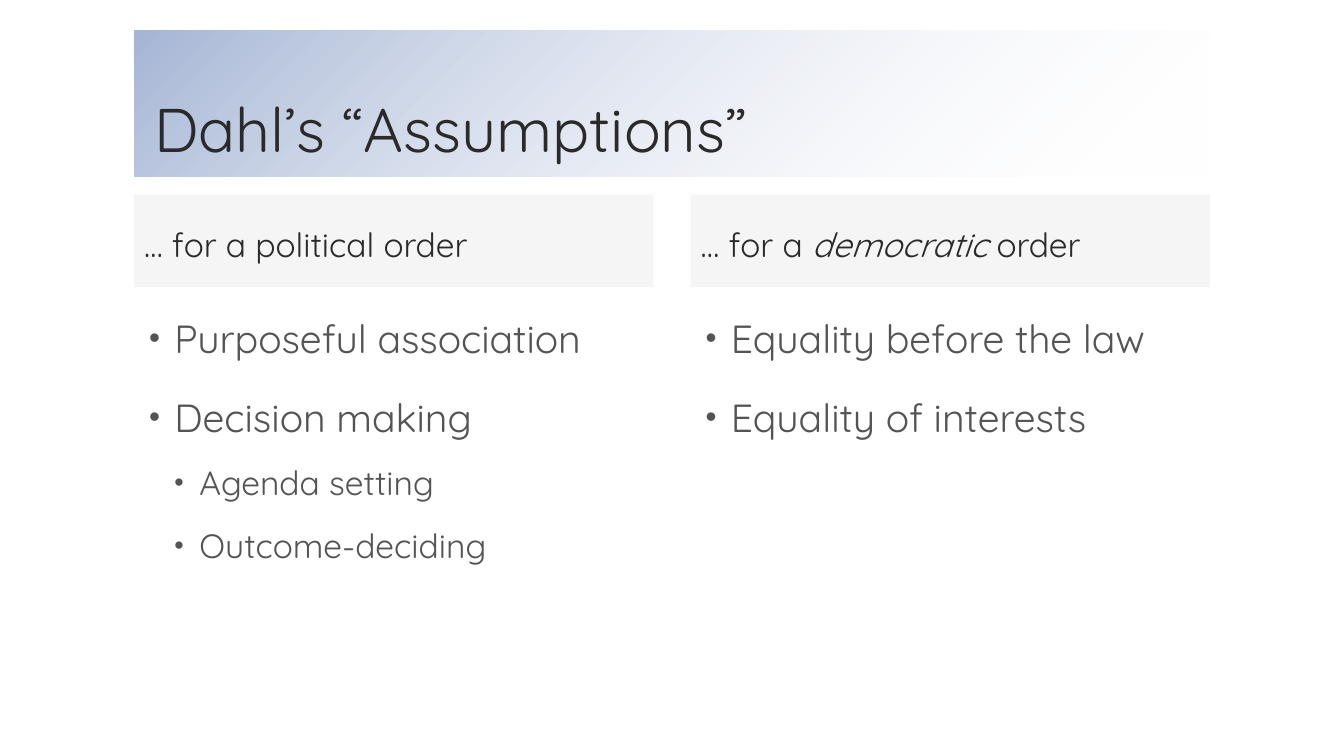
from lxml.etree import SubElement
from pptx import Presentation
from pptx.dml.color import RGBColor
from pptx.enum.shapes import MSO_SHAPE
from pptx.enum.text import MSO_ANCHOR, MSO_AUTO_SIZE, PP_ALIGN
from pptx.oxml.ns import qn
from pptx.util import Pt

PX = 9144  # 100 px to the inch
FONT = "Quicksand"
DARK = RGBColor(0x2A, 0x2A, 0x2A)
GREY = RGBColor(0x54, 0x54, 0x54)
BLUE = RGBColor(0xA6, 0xB6, 0xD6)
WHITE = RGBColor(0xFF, 0xFF, 0xFF)
SILVER = RGBColor(0xBF, 0xBF, 0xBF)

LEFT, COL_W, COL_STEP = 133, 515, 552
# level: text size, space before, left indent in px
LEVELS = {0: (28, 18, 30), 1: (24, 12, 55)}
HANG = 25

COLUMNS = [
    ([("… for a political order", False)],
     [("Purposeful association", 0), ("Decision making", 0),
      ("Agenda setting", 1), ("Outcome-deciding", 1)]),
    ([("… for a ", False), ("democratic", True), (" order", False)],
     [("Equality before the law", 0), ("Equality of interests", 0)]),
]


def add_run(p, text, size, color, italic=False):
    r = p.add_run()
    r.text = text
    for name, value in {"name": FONT, "size": Pt(size), "italic": italic}.items():
        setattr(r.font, name, value)
    r.font.color.rgb = color


def set_alpha(fill_element, percent):
    color = fill_element.find(qn("a:srgbClr"))
    SubElement(color, qn("a:alpha"), val=str(percent * 1000))


prs = Presentation()
prs.slide_width, prs.slide_height = 1333 * PX, 750 * PX
s = prs.slides.add_slide(prs.slide_layouts[5])

# Title band
title = s.shapes.title
title.left, title.top, title.width, title.height = (v * PX for v in (LEFT, 30, 1067, 145))
title.fill.gradient()
title.fill.gradient_angle = 315
for stop, color, position in zip(title.fill.gradient_stops, (BLUE, WHITE), (0, 1)):
    stop.color.rgb = color
    stop.position = position
stops = title.element.spPr.findall(".//" + qn("a:gs"))
set_alpha(stops[-1], 0)

tf = title.text_frame
title_format = {
    "auto_size": MSO_AUTO_SIZE.NONE, "word_wrap": True,
    "vertical_anchor": MSO_ANCHOR.BOTTOM,
    "margin_left": 20 * PX, "margin_right": 20 * PX,
    "margin_top": 10 * PX, "margin_bottom": 10 * PX,
}
for name, value in title_format.items():
    setattr(tf, name, value)
p = tf.paragraphs[0]
p.alignment, p.line_spacing = PP_ALIGN.LEFT, 0.9
add_run(p, "Dahl’s “Assumptions”", 44, DARK)

for i, (heading, items) in enumerate(COLUMNS):
    x = LEFT + i * COL_STEP

    # Column heading
    sp = s.shapes.add_shape(MSO_SHAPE.RECTANGLE, x * PX, 193 * PX, COL_W * PX, 92 * PX)
    sp.shadow.inherit = False
    sp.line.fill.background()
    sp.fill.solid()
    sp.fill.fore_color.rgb = SILVER
    set_alpha(sp.element.spPr.find(qn("a:solidFill")), 15)
    tf = sp.text_frame
    tf.word_wrap, tf.vertical_anchor = True, MSO_ANCHOR.MIDDLE
    p = tf.paragraphs[0]
    p.alignment, p.line_spacing = PP_ALIGN.LEFT, 1.14
    for text, italic in heading:
        add_run(p, text, 24, DARK, italic)

    # Bulleted list
    tf = s.shapes.add_textbox(x * PX, 300 * PX, COL_W * PX, 358 * PX).text_frame
    tf.word_wrap = True
    for n, (text, level) in enumerate(items):
        size, before, indent = LEVELS[level]
        p = tf.add_paragraph() if n else tf.paragraphs[0]
        p.level, p.line_spacing, p.space_before = level, 1.14, Pt(before)
        pPr = p._p.get_or_add_pPr()
        pPr.set("marL", str(indent * PX))
        pPr.set("indent", str(-HANG * PX))
        SubElement(SubElement(pPr, qn("a:buClr")), qn("a:srgbClr"), val=str(GREY))
        SubElement(pPr, qn("a:buSzPct"), val="80000")
        SubElement(pPr, qn("a:buFont"), typeface="Arial")
        SubElement(pPr, qn("a:buChar"), char="•")
        add_run(p, text, size, GREY)

prs.save("out.pptx")
